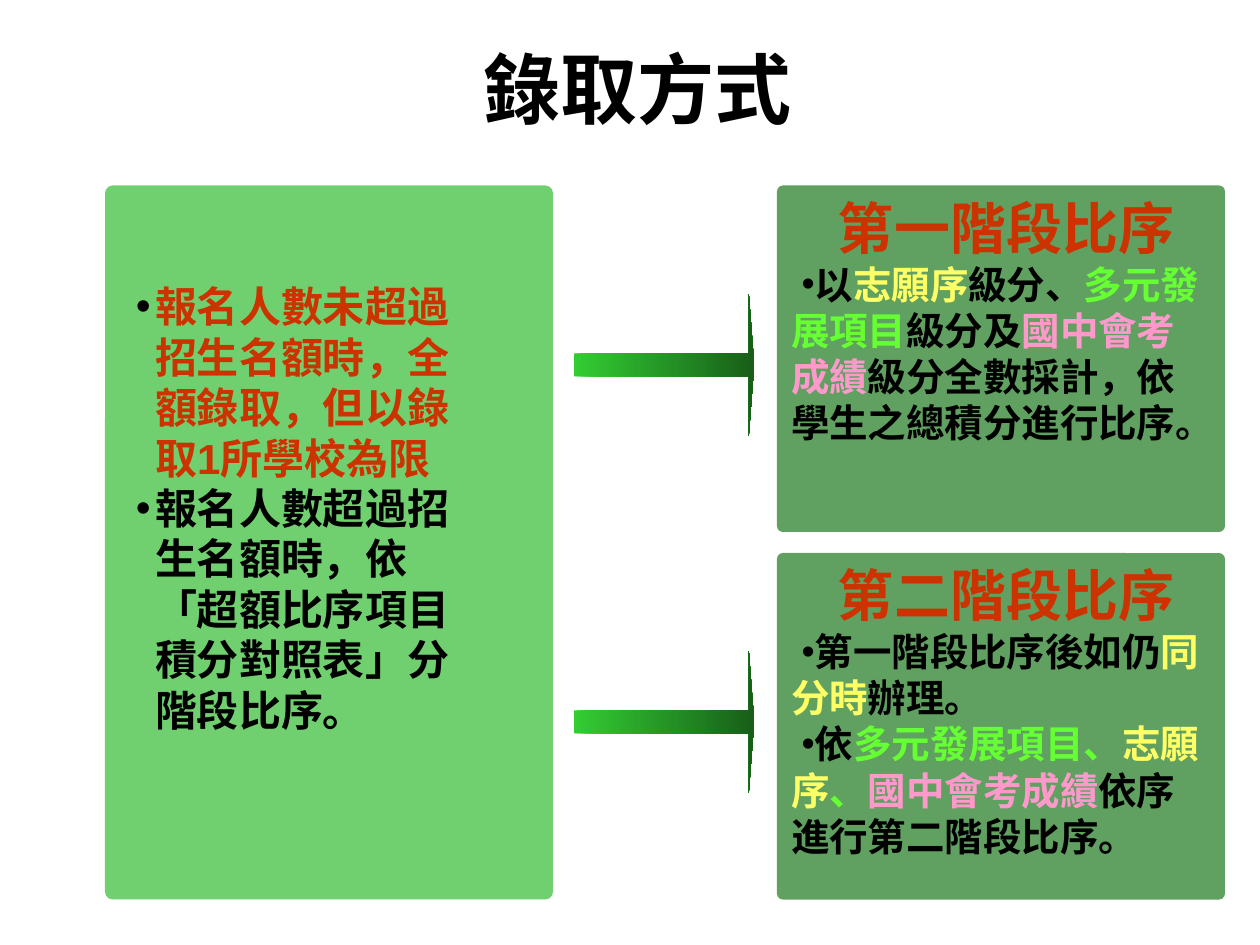
from pptx import Presentation
from pptx.dml.color import RGBColor as Rgb
from pptx.enum.shapes import MSO_SHAPE as Kind
from pptx.enum.text import MSO_ANCHOR as Anchor, PP_ALIGN as Align
from pptx.oxml.ns import qn
from pptx.util import Pt
from lxml.etree import SubElement as Sub

HUES = {"ink": "000000", "red": "CC3300", "gold": "FFFF66", "lime": "66FF33",
        "pink": "FF99CC", "pale": "70D070", "deep": "60A060",
        "start": "33CC33", "end": "185E18"}


class Deck:
    """Holds the style and the current slide, and draws its elements."""

    def __init__(self, wide, high):
        self.prs = Presentation()
        self.prs.slide_width, self.prs.slide_height = Pt(wide), Pt(high)
        self.slide = self.prs.slides.add_slide(self.prs.slide_layouts[6])
        self.face = "Arial"

    def hue(self, name):
        return Rgb.from_string(HUES[name])

    def shape(self, kind, box, *adjust):
        item = self.slide.shapes.add_shape(kind, *map(Pt, box))
        item.shadow.inherit = False
        item.line.fill.background()
        for i, value in enumerate(adjust):
            item.adjustments[i] = value
        return item

    def panel(self, box, fill):
        item = self.shape(Kind.ROUNDED_RECTANGLE, box, 0.017)
        item.fill.solid()
        item.fill.fore_color.rgb = self.hue(fill)
        return item

    def arrow(self, box):
        item = self.shape(Kind.RIGHT_ARROW, box, 0.162, 0.038)
        item.fill.gradient()
        item.fill.gradient_angle = 0
        for stop, name in zip(item.fill.gradient_stops, ("start", "end")):
            stop.color.rgb = self.hue(name)

    def label(self, box):
        return self.slide.shapes.add_textbox(*map(Pt, box))

    def indent(self, para, left, first, scale=None):
        props = para._p.get_or_add_pPr()
        props.set("marL", str(Pt(left)))
        props.set("indent", str(Pt(first)))
        if scale:
            tint = Sub(props, qn("a:buClr"))
            Sub(tint, qn("a:srgbClr"), val=HUES["ink"])
            Sub(props, qn("a:buSzPct"), val=str(scale * 1000))
            Sub(props, qn("a:buFont"), typeface=self.face)
            Sub(props, qn("a:buChar"), char="•")

    def put(self, item, paras, size, align=Align.LEFT, dent=(0, 0)):
        frame = item.text_frame
        frame.word_wrap = True
        frame.vertical_anchor = Anchor.TOP
        for runs in paras:
            para = frame.add_paragraph() if frame.text else frame.paragraphs[0]
            para.alignment = align
            self.indent(para, *dent)
            for text, tone in runs:
                run = para.add_run()
                run.text = text
                font = run.font
                font.name, font.size, font.bold = self.face, Pt(size), True
                font.color.rgb = self.hue(tone)

    def card(self, box, head, paras):
        item = self.panel(box, "deep")
        self.put(item, [[(head, "red")]], 32, Align.CENTER, (0, 6))
        self.put(item, paras, 22, dent=(0, 6, 98))

    def save(self):
        self.prs.save("out.pptx")


def main():
    deck = Deck(720, 540)
    deck.put(deck.label((269, 20, 215, 60)), [[("錄取方式", "ink")]], 44)
    deck.panel((60, 106, 256, 408), "pale")
    for top in (168, 372):
        deck.arrow((328, top, 103, 81))

    rules = [[("報名人數未超過招生名額時，全額錄取，但以錄取1所學校為限", "red")],
             [("報名人數超過招生名額時，依「超額比序項目積分對照表」分階段比序。", "ink")]]
    deck.put(deck.label((70.5, 157, 215, 309)), rules, 24, dent=(11, -11, 101))

    first = [[("以", "ink"), ("志願序", "gold"), ("級分、", "ink"),
              ("多元發展項目", "lime"), ("級分及", "ink"), ("國中會考成績", "pink"),
              ("級分全數採計，依學生之總積分進行比序。", "ink")]]
    second = [[("第一階段比序後如仍", "ink"), ("同分時", "gold"), ("辦理。", "ink")],
              [("依", "ink"), ("多元發展項目、", "lime"), ("志願序", "gold"),
               ("、", "lime"), ("國中會考成績", "pink"),
               ("依序進行第二階段比序。", "ink")]]
    stages = [("第一階段比序", first), ("第二階段比序", second)]
    for row, (head, paras) in enumerate(stages):
        deck.card((444, 106 + 210 * row, 256, 198), head, paras)
    deck.save()


if __name__ == "__main__":
    main()
